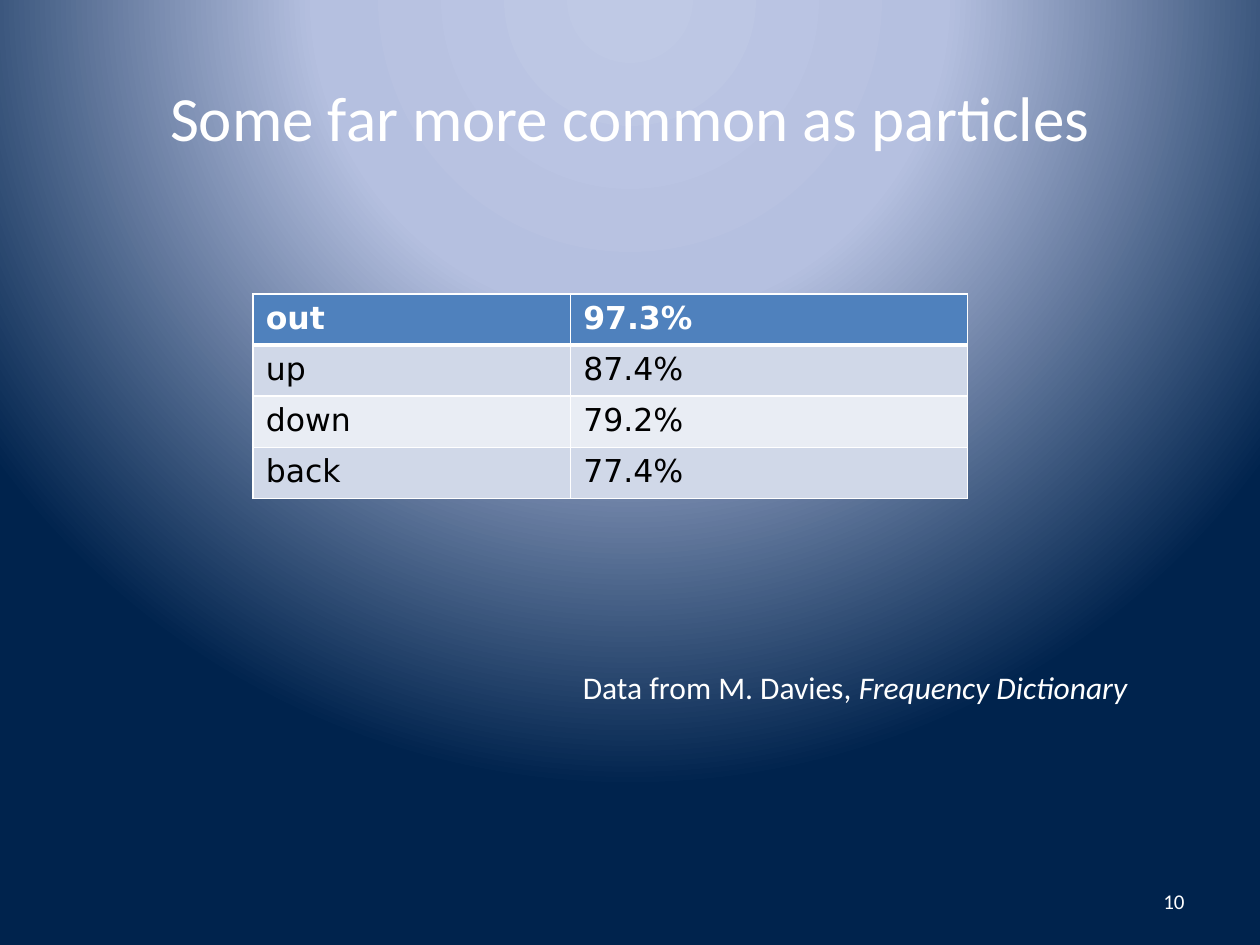
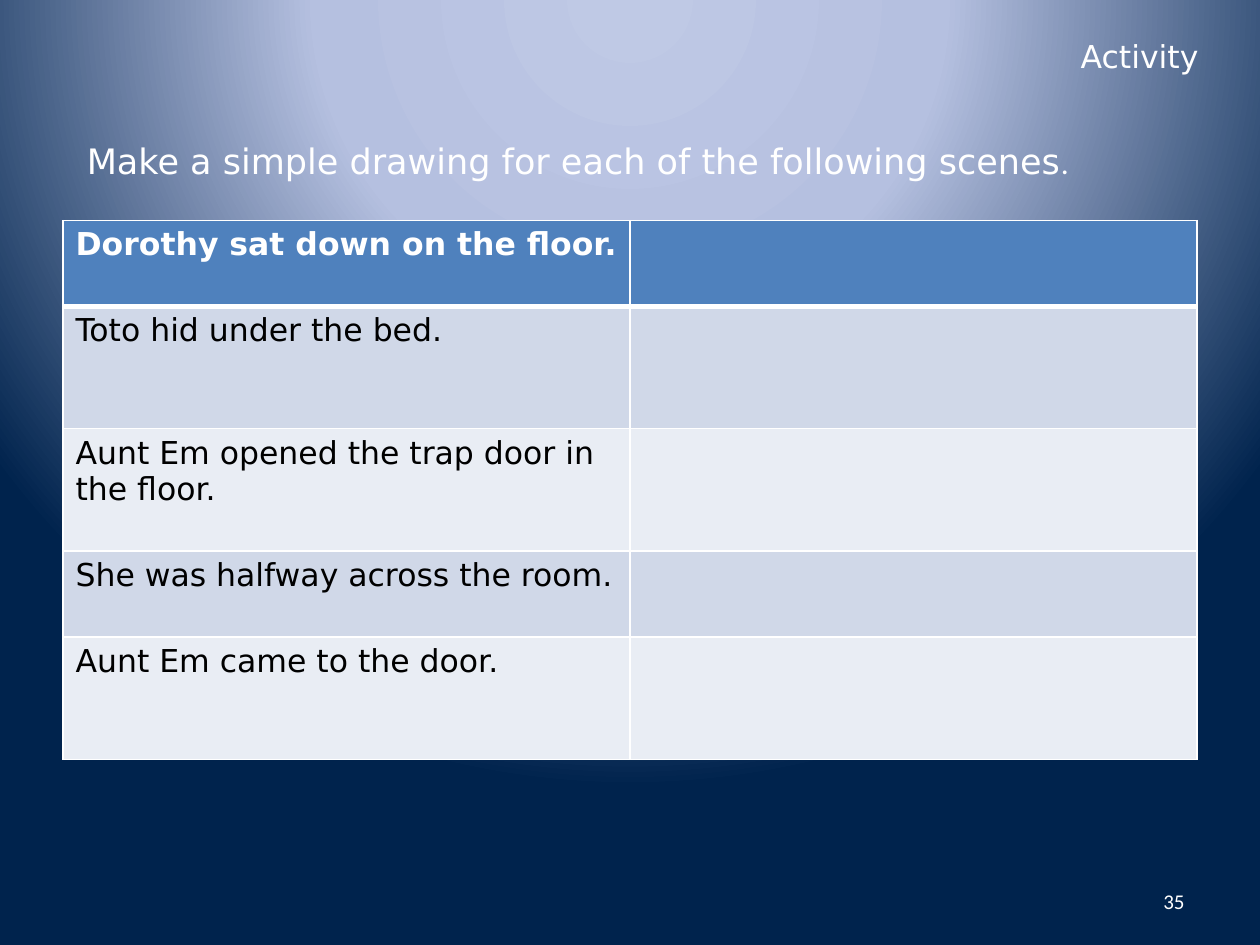
import lxml.etree
import pptx
import pptx.dml.color
import pptx.enum.text
import pptx.oxml.ns
import pptx.util

Pt = pptx.util.Pt
RGB = pptx.dml.color.RGBColor
ALIGN = pptx.enum.text.PP_ALIGN
ANCHOR = pptx.enum.text.MSO_ANCHOR
AUTO_SIZE = pptx.enum.text.MSO_AUTO_SIZE
qn = pptx.oxml.ns.qn

WHITE = RGB(0xFF, 0xFF, 0xFF)
BLACK = RGB(0x00, 0x00, 0x00)
HEADER_BLUE = RGB(0x4F, 0x81, 0xBD)
BANDS = RGB(0xD0, 0xD8, 0xE8), RGB(0xE9, 0xED, 0xF4)
GLOW_STOPS = (
    (0, RGB(0xBF, 0xC9, 0xE5)),
    (40, RGB(0xB5, 0xC0, 0xE0)),
    (100, RGB(0x00, 0x23, 0x4D)),
)
CALIBRI = "Calibri"
DEJAVU = "DejaVu Sans"
NUMBER_BOX = (516, 500.4, 168, 28.8)

SLIDES = [
    {
        "title": {
            "spans": [("Some far more common as particles", {})],
            "place": (36, 21.6, 648, 90),
            "size": 36, "face": CALIBRI, "align": ALIGN.CENTER,
        },
        "table": {
            "place": (144.7, 168),
            "columns": (181.4, 226.8),
            "heights": (29.2,) * 4,
            "rows": [("out", "97.3%"), ("up", "87.4%"),
                     ("down", "79.2%"), ("back", "77.4%")],
        },
        "caption": {
            "spans": [("Data from M. Davies, ", {}), ("Frequency Dictionary", {"italic": True})],
            "place": (326, 378, 329, 29),
            "size": 18, "face": CALIBRI,
        },
        "number": "10",
    },
    {
        "title": {
            "spans": [("Activity", {})],
            "place": (44, 15, 648, 34),
            "size": 18, "face": DEJAVU, "align": ALIGN.RIGHT,
        },
        "table": {
            "place": (36, 126),
            "columns": (324, 324),
            "heights": (49, 70, 70, 49, 70),
            "rows": [("Dorothy sat down on the floor.", ""),
                     ("Toto hid under the bed.", ""),
                     ("Aunt Em opened the trap door in the floor.", ""),
                     ("She was halfway across the room.", ""),
                     ("Aunt Em came to the door.", "")],
        },
        "caption": {
            "spans": [("Make a simple drawing for each of the following scenes", {}),
                      (".", {"size": Pt(18), "name": CALIBRI})],
            "place": (42.5, 76.3, 580, 31.5),
            "size": 20, "face": DEJAVU,
        },
        "number": "35",
    },
]


def add_child(parent, tag, **attributes):
    child = lxml.etree.SubElement(parent, qn(tag))
    for key, value in attributes.items():
        child.set(key, str(value))
    return child


def add_colour(parent, colour):
    add_child(parent, "a:srgbClr", val=colour)


def paint_background(master):
    master.background.fill.solid()
    properties = master.element.find(".//" + qn("p:bgPr"))
    properties.remove(properties.find(qn("a:solidFill")))
    gradient = add_child(properties, "a:gradFill", rotWithShape=1)
    properties.insert(0, gradient)
    stops = add_child(gradient, "a:gsLst")
    for percent, colour in GLOW_STOPS:
        add_colour(add_child(stops, "a:gs", pos=percent * 1000), colour)
    circle = add_child(gradient, "a:path", path="circle")
    add_child(circle, "a:fillToRect", l=50000, t=-80000, r=50000, b=180000)


def style_font(font, size, face, colour):
    font.size = Pt(size)
    font.name = face
    font.color.rgb = colour


def add_text(page, spans, place, size, face, align=ALIGN.LEFT, wrap=True):
    box = page.shapes.add_textbox(*map(Pt, place))
    frame = box.text_frame
    frame.word_wrap = wrap
    frame.auto_size = AUTO_SIZE.NONE if wrap else AUTO_SIZE.SHAPE_TO_FIT_TEXT
    frame.vertical_anchor = ANCHOR.MIDDLE if wrap else ANCHOR.TOP
    para = frame.paragraphs[0]
    para.alignment = align
    style_font(para.font, size, face, WHITE)
    for text, changes in spans:
        span = para.add_run()
        span.text = text
        style_font(span.font, size, face, WHITE)
        for name, value in changes.items():
            setattr(span.font, name, value)


def add_borders(cell, row):
    properties = cell._tc.get_or_add_tcPr()
    widths = {"L": 1, "R": 1, "T": 3 if row == 1 else 1, "B": 3 if row == 0 else 1}
    for position, (side, width) in enumerate(widths.items()):
        line = add_child(properties, "a:ln" + side, w=int(Pt(width)))
        add_colour(add_child(line, "a:solidFill"), WHITE)
        properties.insert(position, line)


def add_table(page, place, columns, heights, rows):
    size = sum(columns), sum(heights)
    table = page.shapes.add_table(len(rows), len(columns), *map(Pt, place + size)).table
    table.horz_banding = False
    for column, width in zip(table.columns, columns):
        column.width = Pt(width)
    for row, (texts, height) in enumerate(zip(rows, heights)):
        header = row == 0
        table.rows[row].height = Pt(height)
        for column, text in enumerate(texts):
            cell = table.cell(row, column)
            cell.text = text
            font = cell.text_frame.paragraphs[0].font
            style_font(font, 18, DEJAVU, WHITE if header else BLACK)
            font.bold = header
            cell.fill.solid()
            cell.fill.fore_color.rgb = HEADER_BLUE if header else BANDS[(row - 1) % 2]
            add_borders(cell, row)


def main():
    deck = pptx.Presentation()
    deck.slide_width, deck.slide_height = Pt(720), Pt(540)
    paint_background(deck.slide_master)
    for content in SLIDES:
        page = deck.slides.add_slide(deck.slide_layouts[6])
        add_text(page, **content["title"])
        add_table(page, **content["table"])
        add_text(page, [(content["number"], {})], NUMBER_BOX, 12, CALIBRI, ALIGN.RIGHT)
        add_text(page, **content["caption"], wrap=False)
    deck.save("out.pptx")


if __name__ == "__main__":
    main()
